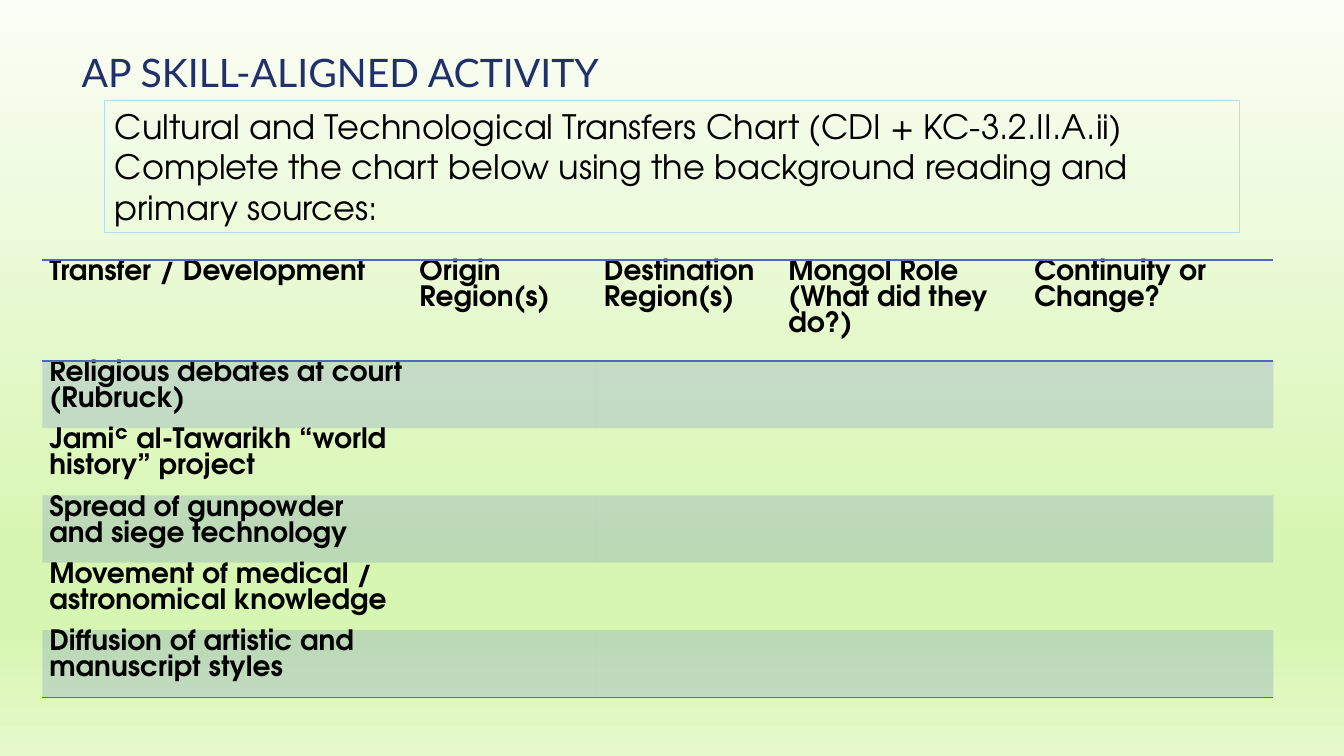
import dataclasses
import lxml.etree
import pptx
import pptx.dml.color
import pptx.enum.shapes
import pptx.enum.text
import pptx.oxml.ns
import pptx.util

Inches, Pt = pptx.util.Inches, pptx.util.Pt
qn = pptx.oxml.ns.qn

COLORS = {"title": "21306A", "text": "000000", "frame": "B4DCFA", "accent": "4E67C8"}
BACKDROP = [(0, "FBFEF6"), (74, "D7F6B1"), (83, "D7F6B1"), (100, "E5F9CB")]
BODY_FONT = "TeX Gyre Adventor"


@dataclasses.dataclass
class Style:
    font: str
    size: int
    color: str
    bold: bool = False


@dataclasses.dataclass
class Column:
    heading: str
    width: float


TITLE = Style("Lato", 28, "title")
INSTRUCTION = Style(BODY_FONT, 24, "text")
CELL = Style(BODY_FONT, 20, "text", True)

COLUMNS = [
    Column("Transfer / Development", 3.67),
    Column("Origin Region(s)", 1.83),
    Column("Destination Region(s)", 1.83),
    Column("Mongol Role (What did they do?)", 2.44),
    Column("Continuity or Change?", 2.44),
]
TRANSFERS = [
    "Religious debates at court (Rubruck)",
    "Jamiʿ al-Tawarikh “world history” project",
    "Spread of gunpowder and siege technology",
    "Movement of medical / astronomical knowledge",
    "Diffusion of artistic and manuscript styles",
]
INSTRUCTIONS = [
    "Cultural and Technological Transfers Chart (CDI + KC-3.2.II.A.ii)",
    "Complete the chart below using the background reading and primary sources:",
]


def rgb(name: str) -> pptx.dml.color.RGBColor:
    return pptx.dml.color.RGBColor.from_string(COLORS[name])


def write(tf, lines: list[str], style: Style, spacing: float = 1.0) -> None:
    tf.word_wrap = True
    for i, line in enumerate(lines):
        p = tf.add_paragraph() if i else tf.paragraphs[0]
        p.alignment = pptx.enum.text.PP_ALIGN.LEFT
        p.line_spacing = spacing
        p.space_before = p.space_after = Pt(0)
        r = p.add_run()
        r.text = line
        r.font.name = style.font
        r.font.size = Pt(style.size)
        r.font.bold = style.bold
        r.font.color.rgb = rgb(style.color)


def add_backdrop(slide, width: int, height: int) -> None:
    sp = slide.shapes.add_shape(pptx.enum.shapes.MSO_SHAPE.RECTANGLE, 0, 0, width, height)
    sp.shadow.inherit = False
    sp.line.fill.background()
    sp.fill.gradient()
    sp.fill.gradient_angle = 270
    stops = sp._element.spPr.find(".//" + qn("a:gsLst"))
    for stop in list(stops):
        stops.remove(stop)
    for position, color in BACKDROP:
        stop = lxml.etree.SubElement(stops, qn("a:gs"), pos=str(position * 1000))
        lxml.etree.SubElement(stop, qn("a:srgbClr"), val=color)
    # Send behind the placeholders
    slide.shapes._spTree.insert(2, sp._element)


def format_cell(cell, banded: bool, top: bool, bottom: bool) -> None:
    cell.margin_left = cell.margin_right = Inches(0.07)
    cell.margin_top = cell.margin_bottom = 0
    tcPr = cell._tc.get_or_add_tcPr()
    if banded:
        cell.fill.solid()
        cell.fill.fore_color.rgb = rgb("accent")
        tint = tcPr.find(".//" + qn("a:srgbClr"))
        lxml.etree.SubElement(tint, qn("a:alpha"), val="20000")
    else:
        cell.fill.background()
    # Borders come before the fill in the cell properties
    sides = [("a:lnL", False), ("a:lnR", False), ("a:lnT", top), ("a:lnB", bottom)]
    for i, (tag, visible) in enumerate(sides):
        ln = tcPr.makeelement(qn(tag), {"w": str(Pt(1))})
        tcPr.insert(i, ln)
        if visible:
            solid = lxml.etree.SubElement(ln, qn("a:solidFill"))
            lxml.etree.SubElement(solid, qn("a:srgbClr"), val=COLORS["accent"])
        else:
            lxml.etree.SubElement(ln, qn("a:noFill"))


def add_transfer_table(slide) -> None:
    last = len(TRANSFERS)
    frame = slide.shapes.add_table(last + 1, len(COLUMNS), Inches(0.42), Inches(2.58),
                                   Inches(12.21), Inches(4.33))
    table = frame.table
    table.first_row = table.horz_banding = False
    for col, column in zip(table.columns, COLUMNS):
        col.width = Inches(column.width)
    for i, row in enumerate(table.rows):
        row.height = Inches(2 / 3 if i else 1)
        texts = [TRANSFERS[i - 1]] if i else [c.heading for c in COLUMNS]
        for cell in row.cells:
            format_cell(cell, i % 2 == 1, i in (0, 1), i in (0, last))
        for cell, text in zip(row.cells, texts):
            write(cell.text_frame, [text], CELL)


def main() -> None:
    prs = pptx.Presentation()
    prs.slide_width, prs.slide_height = Inches(13.33), Inches(7.5)
    slide = prs.slides.add_slide(prs.slide_layouts[5])
    add_backdrop(slide, prs.slide_width, prs.slide_height)

    # Title
    title = slide.shapes.title
    title.left, title.top = Inches(0.71), Inches(0.41)
    title.width, title.height = Inches(11.92), Inches(0.59)
    title.text_frame.vertical_anchor = pptx.enum.text.MSO_ANCHOR.BOTTOM
    write(title.text_frame, ["AP SKILL-ALIGNED ACTIVITY"], TITLE, 0.9)

    # Framed instructions
    sp = slide.shapes.add_textbox(Inches(1.04), Inches(1), Inches(11.25), Inches(1.31))
    sp.line.color.rgb = rgb("frame")
    sp.line.width = Pt(0.75)
    write(sp.text_frame, INSTRUCTIONS, INSTRUCTION)
    sp.text_frame.auto_size = pptx.enum.text.MSO_AUTO_SIZE.SHAPE_TO_FIT_TEXT

    # Chart to complete
    add_transfer_table(slide)
    prs.save("out.pptx")


if __name__ == "__main__":
    main()
